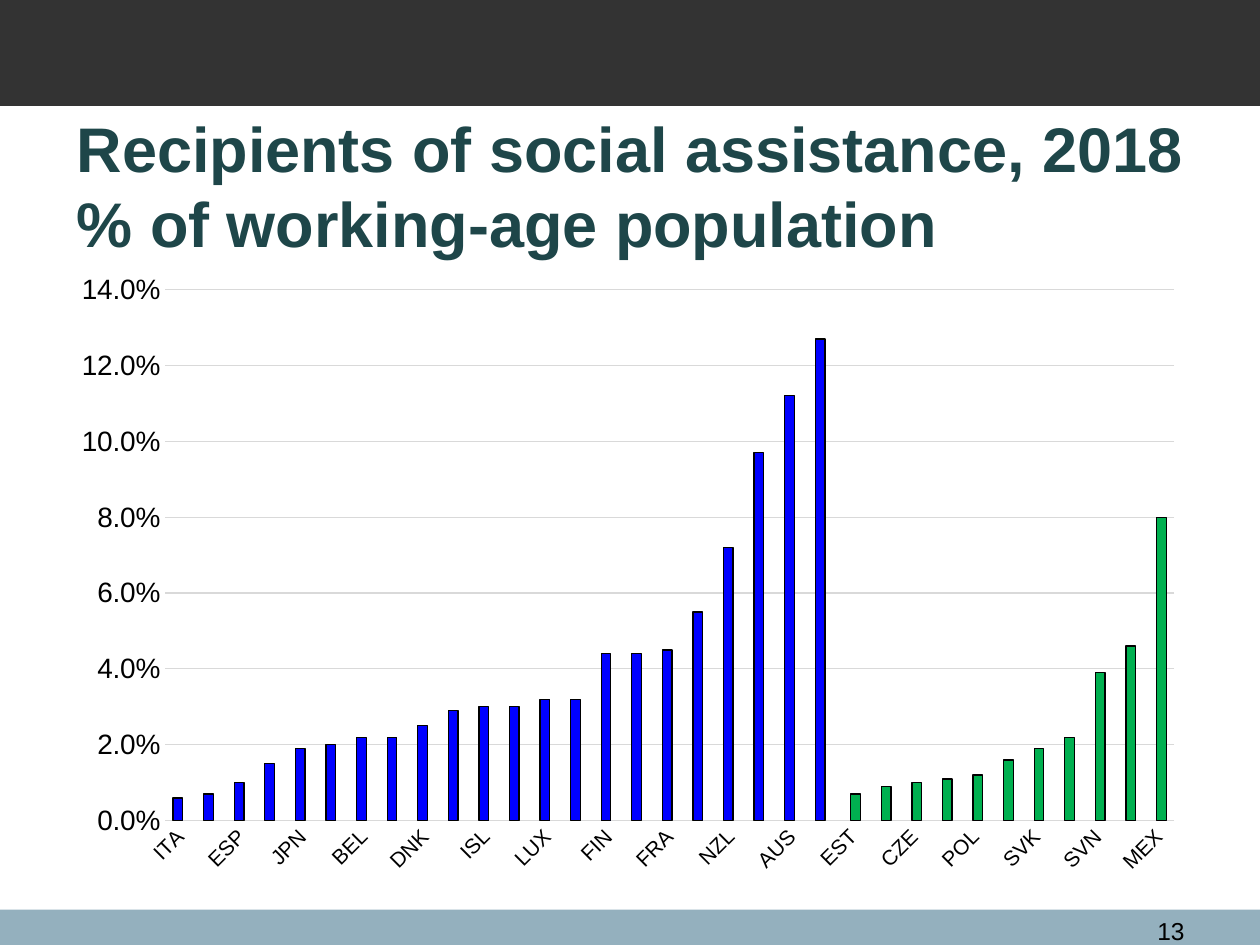
from lxml import etree
from pptx import Presentation
from pptx.chart.data import CategoryChartData
from pptx.dml.color import RGBColor
from pptx.enum.chart import XL_CHART_TYPE as ChartType, XL_TICK_MARK as TickMark
from pptx.enum.shapes import MSO_SHAPE as Shape
from pptx.enum.text import MSO_ANCHOR as Anchor, PP_ALIGN as Align
from pptx.oxml.ns import qn
from pptx.util import Inches, Pt

BLACK = RGBColor(0x00, 0x00, 0x00)
CHARCOAL = RGBColor(0x33, 0x33, 0x33)
STEEL = RGBColor(0x94, 0xB0, 0xBE)
TEAL = RGBColor(0x1E, 0x46, 0x49)
GRID = RGBColor(0xD9, 0xD9, 0xD9)
BLUE = RGBColor(0x00, 0x00, 0xFF)
GREEN = RGBColor(0x00, 0xB0, 0x50)


def style_font(font, size, color, bold=False):
    formats = {"name": "Arial", "size": Pt(size), "bold": bold}
    for name, value in formats.items():
        setattr(font, name, value)
    font.color.rgb = color


def style_line(line, color):
    line.color.rgb = color
    line.width = Pt(0.75)


deck = Presentation()
deck.slide_width, deck.slide_height = Inches(10), Inches(7.5)
page = deck.slides.add_slide(deck.slide_layouts[6])

for top, height, color in [(7.22, 0.28, STEEL), (0, 0.84, CHARCOAL)]:
    band = page.shapes.add_shape(Shape.RECTANGLE, 0, Inches(top), Inches(10), Inches(height))
    band.shadow.inherit = False
    band.fill.solid()
    band.fill.fore_color.rgb = color
    band.line.fill.background()

texts = [
    ("Recipients of social assistance, 2018\v% of working-age population",
     (0.51, 0.84, 9, 1.25), Anchor.MIDDLE, Align.LEFT, (36, TEAL, True)),
    ("13", (8.86, 7.22, 0.64, 0.24), Anchor.TOP, Align.RIGHT, (14, BLACK)),
]
for words, place, anchor, align, font_style in texts:
    box = page.shapes.add_textbox(*map(Inches, place))
    frame = box.text_frame
    frame.word_wrap = True
    frame.vertical_anchor = anchor
    para = frame.paragraphs[0]
    para.text = words
    para.alignment = align
    for span in para.runs:
        style_font(span.font, *font_style)

first_group = {
    "ITA": 0.006, "DEU": 0.007, "ESP": 0.01, "PRT": 0.015, "JPN": 0.019, "IRL": 0.02,
    "BEL": 0.022, "NOR": 0.022, "DNK": 0.025, "AUT": 0.029, "ISL": 0.03, "CHE": 0.03,
    "LUX": 0.032, "SWE": 0.032, "FIN": 0.044, "NLD": 0.044, "FRA": 0.045, "CAN": 0.055,
    "NZL": 0.072, "USA": 0.097, "AUS": 0.112, "GRC": 0.127,
}
second_group = {
    "EST": 0.007, "ISR": 0.009, "CZE": 0.01, "LVA": 0.011, "POL": 0.012, "HUN": 0.016,
    "SVK": 0.019, "LTU": 0.022, "SVN": 0.039, "KOR": 0.046, "MEX": 0.08,
}
countries = [*first_group, *second_group]
data = CategoryChartData(number_format="0.0%")
data.categories = countries
for name, group in [("Series 1", first_group), ("Series 2", second_group)]:
    data.add_series(name, [group.get(country) for country in countries])

chart = page.shapes.add_chart(
    ChartType.COLUMN_CLUSTERED, Inches(0.5), Inches(2.1), Inches(9), Inches(4.96), data
).chart
chart.has_legend = False
chart.has_title = False
style_font(chart.font, 10, BLACK)

plot = chart.plots[0]
plot.gap_width = 168
plot.overlap = 50
plot.vary_by_categories = False
for series, color in zip(plot.series, [BLUE, GREEN]):
    series.format.fill.solid()
    series.format.fill.fore_color.rgb = color
    style_line(series.format.line, BLACK)

countries_axis, share_axis = chart.category_axis, chart.value_axis
for axis, size in [(countries_axis, 12), (share_axis, 16)]:
    axis.major_tick_mark = axis.minor_tick_mark = TickMark.NONE
    style_font(axis.tick_labels.font, size, BLACK)
style_line(countries_axis.format.line, GRID)
share_axis.format.line.fill.background()
style_line(share_axis.major_gridlines.format.line, GRID)
scale = {"minimum_scale": 0, "maximum_scale": 0.14, "major_unit": 0.02}
for name, value in scale.items():
    setattr(share_axis, name, value)
share_axis.tick_labels.number_format = "0.0%"
share_axis.tick_labels.number_format_is_linked = False

axis_xml = chart.element.find(".//" + qn("c:catAx"))
axis_xml.find(qn("c:txPr")).find(qn("a:bodyPr")).set("rot", "-2700000")
skip = etree.Element(qn("c:tickLblSkip"), val="2")
axis_xml.find(qn("c:lblOffset")).addnext(skip)

plot_area = chart.element.find(".//" + qn("c:plotArea"))
for old_layout in plot_area.findall(qn("c:layout")):
    plot_area.remove(old_layout)
layout = etree.Element(qn("c:layout"))
manual = etree.SubElement(layout, qn("c:manualLayout"))
settings = {
    "layoutTarget": "inner", "xMode": "edge", "yMode": "edge",
    "x": "0.09", "y": "0.04", "w": "0.89", "h": "0.85",
}
for name, value in settings.items():
    etree.SubElement(manual, qn("c:" + name), val=value)
plot_area.insert(0, layout)

deck.save("out.pptx")
